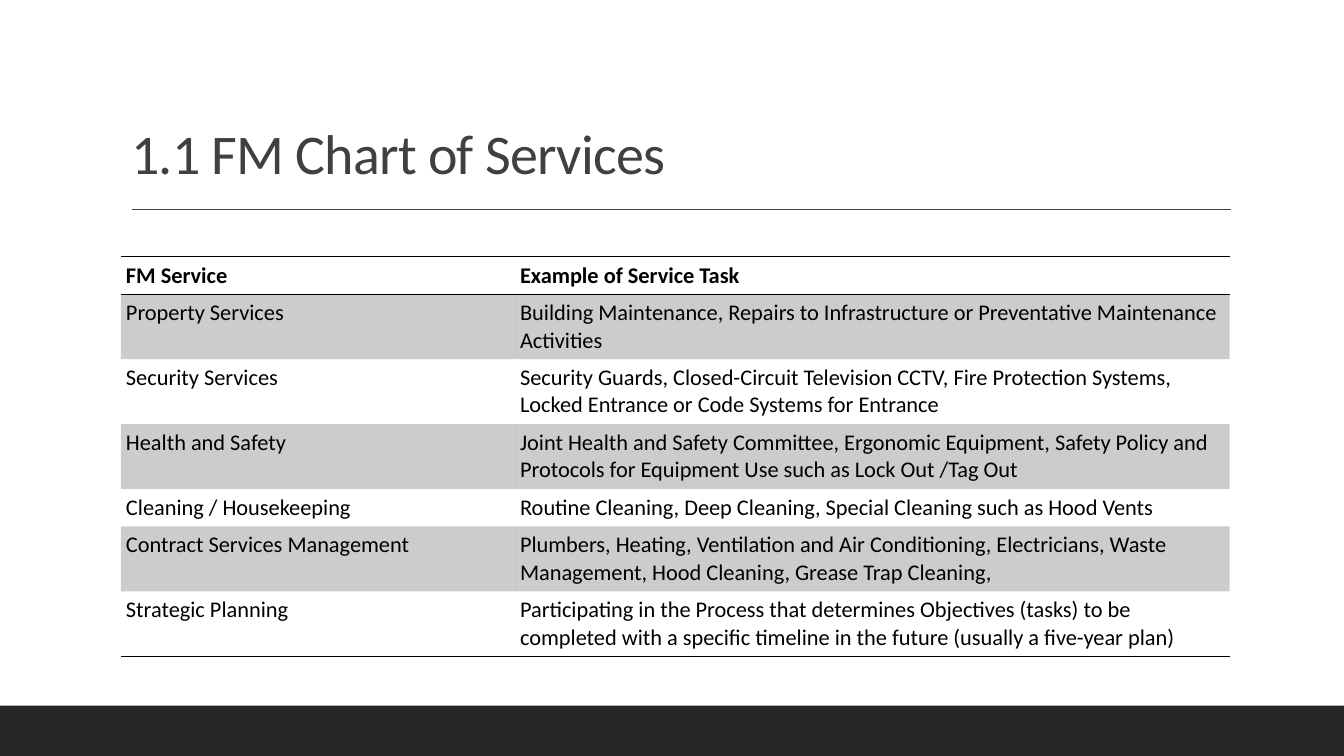
"""Build the slide with the table of facility management services."""
from dataclasses import dataclass
from typing import Any

from lxml import etree
from pptx import Presentation
from pptx.dml.color import RGBColor
from pptx.enum.dml import MSO_THEME_COLOR
from pptx.enum.shapes import MSO_CONNECTOR, MSO_SHAPE
from pptx.enum.text import MSO_ANCHOR, MSO_AUTO_SIZE, PP_ALIGN
from pptx.oxml.ns import qn
from pptx.util import Pt

STRAIGHT = MSO_CONNECTOR.STRAIGHT
RECTANGLE = MSO_SHAPE.RECTANGLE
BOTTOM = MSO_ANCHOR.BOTTOM
TOP = MSO_ANCHOR.TOP
NO_AUTOFIT = MSO_AUTO_SIZE.NONE
LEFT = PP_ALIGN.LEFT
NO_THEME = MSO_THEME_COLOR.NOT_THEME_COLOR

COLORS = {"page": "FFFFFF", "title": "404040", "footer": "262626", "ink": "000000"}
FONT = "Calibri"
PAGE_WIDTH, PAGE_HEIGHT = 960, 540
FOOTER_HEIGHT = 36
PLAIN_TABLE_STYLE = "{2D5ABB26-0587-4C30-8999-92F81FD0307C}"
COLUMN_WIDTHS = (281.5, 510.5)
ONE_LINE, TWO_LINES = 26, 42
CELL_FORMAT = {
    "margin_left": Pt(3.6), "margin_right": Pt(3.6),
    "margin_top": Pt(3.6), "margin_bottom": Pt(3.6),
    "vertical_anchor": TOP,
}


@dataclass(frozen=True)
class ServiceRow:
    """One row of the services table."""
    service: str
    task: str
    height: float = TWO_LINES
    bold: bool = False
    shaded: bool = False
    borders: tuple[str, ...] = ()


ROWS = (
    ServiceRow("FM Service", "Example of Service Task", ONE_LINE, bold=True, borders=("lnT", "lnB")),
    ServiceRow("Property Services",
               "Building Maintenance, Repairs to Infrastructure or Preventative Maintenance Activities",
               shaded=True),
    ServiceRow("Security Services",
               "Security Guards, Closed-Circuit Television CCTV, Fire Protection Systems, "
               "Locked Entrance or Code Systems for Entrance"),
    ServiceRow("Health and Safety",
               "Joint Health and Safety Committee, Ergonomic Equipment, Safety Policy and "
               "Protocols for Equipment Use such as Lock Out /Tag Out", shaded=True),
    ServiceRow("Cleaning / Housekeeping",
               "Routine Cleaning, Deep Cleaning, Special Cleaning such as Hood Vents", ONE_LINE),
    ServiceRow("Contract Services Management",
               "Plumbers, Heating, Ventilation and Air Conditioning, Electricians, Waste "
               "Management, Hood Cleaning, Grease Trap Cleaning,", shaded=True),
    ServiceRow("Strategic Planning",
               "Participating in the Process that determines Objectives (tasks) to be "
               "completed with a specific timeline in the future (usually a five-year plan)",
               borders=("lnB",)),
)


def apply_format(target: Any, values: dict[str, Any]) -> None:
    """Set each named attribute on the target."""
    for name, value in values.items():
        setattr(target, name, value)


def write_text(para: Any, text: str, size: float, color: str, bold: bool = False) -> Any:
    """Add a formatted span to a paragraph and return it."""
    span = para.add_run()
    span.text = text
    apply_format(span.font, {"name": FONT, "size": Pt(size), "bold": bold})
    span.font.color.rgb = RGBColor.from_string(COLORS[color])
    return span


def add_title(page: Any) -> None:
    """Format and fill the title placeholder."""
    box = page.shapes.title
    apply_format(box, {"left": Pt(86.4), "top": Pt(22.5), "width": Pt(792), "height": Pt(114.5)})
    apply_format(box.text_frame, {"vertical_anchor": BOTTOM, "word_wrap": True, "auto_size": NO_AUTOFIT})
    para = box.text_frame.paragraphs[0]
    apply_format(para, {"alignment": LEFT, "line_spacing": 0.9})
    span = write_text(para, "1.1 FM Chart of Services", 40, "title")
    span._r.get_or_add_rPr().set("spc", "-50")


def add_rule(page: Any) -> None:
    """Draw the line under the title."""
    rule = page.shapes.add_connector(STRAIGHT, Pt(94.5), Pt(149.5), Pt(879), Pt(149.5))
    rule.line.width = Pt(1)
    rule.line.color.rgb = RGBColor.from_string(COLORS["title"])
    etree.SubElement(rule._element.spPr, qn("a:effectLst"))


def add_footer(page: Any) -> None:
    """Draw the dark band along the bottom edge."""
    band = page.shapes.add_shape(RECTANGLE, 0, Pt(PAGE_HEIGHT - FOOTER_HEIGHT),
                                 Pt(PAGE_WIDTH), Pt(FOOTER_HEIGHT))
    band.shadow.inherit = False
    band.fill.solid()
    band.fill.fore_color.rgb = RGBColor.from_string(COLORS["footer"])
    band.line.fill.background()


def add_border(cell: Any, side: str) -> None:
    """Put a one-point border ahead of the other cell properties."""
    border = etree.Element(qn(f"a:{side}"), w=str(Pt(1)))
    fill = etree.SubElement(border, qn("a:solidFill"))
    etree.SubElement(fill, qn("a:srgbClr"), val=COLORS["ink"])
    cell._tc.get_or_add_tcPr().insert(0, border)


def fill_cell(cell: Any, row: ServiceRow, text: str) -> None:
    """Write and format one table cell."""
    apply_format(cell, CELL_FORMAT)
    write_text(cell.text_frame.paragraphs[0], text, 16, "ink", row.bold)
    if row.shaded:
        cell.fill.solid()
        cell.fill.fore_color.rgb = RGBColor.from_string(COLORS["ink"])
        color = cell._tc.tcPr.find(f".//{qn('a:srgbClr')}")
        etree.SubElement(color, qn("a:alpha"), val="20000")
    else:
        cell.fill.background()
    for side in reversed(row.borders):
        add_border(cell, side)


def add_services(page: Any) -> None:
    """Build the services table."""
    frame = page.shapes.add_table(len(ROWS), len(COLUMN_WIDTHS), Pt(86.4), Pt(183.4),
                                  Pt(sum(COLUMN_WIDTHS)), Pt(283))
    table = frame.table
    apply_format(table, {"first_row": True, "horz_banding": False})
    table._tbl.tblPr.find(qn("a:tableStyleId")).text = PLAIN_TABLE_STYLE
    for column, width in zip(table.columns, COLUMN_WIDTHS):
        column.width = Pt(width)
    for table_row, row in zip(table.rows, ROWS):
        table_row.height = Pt(row.height)
        for cell, text in zip(table_row.cells, (row.service, row.task)):
            fill_cell(cell, row, text)
    frame.height = Pt(283)


def main() -> None:
    """Build and save the deck."""
    deck = Presentation()
    apply_format(deck, {"slide_width": Pt(PAGE_WIDTH), "slide_height": Pt(PAGE_HEIGHT)})
    page = deck.slides.add_slide(deck.slide_layouts.get_by_name("Title Only"))
    page.background.fill.solid()
    page.background.fill.fore_color.rgb = RGBColor.from_string(COLORS["page"])
    add_title(page)
    add_rule(page)
    add_footer(page)
    add_services(page)
    deck.save("out.pptx")


if __name__ == "__main__":
    main()
